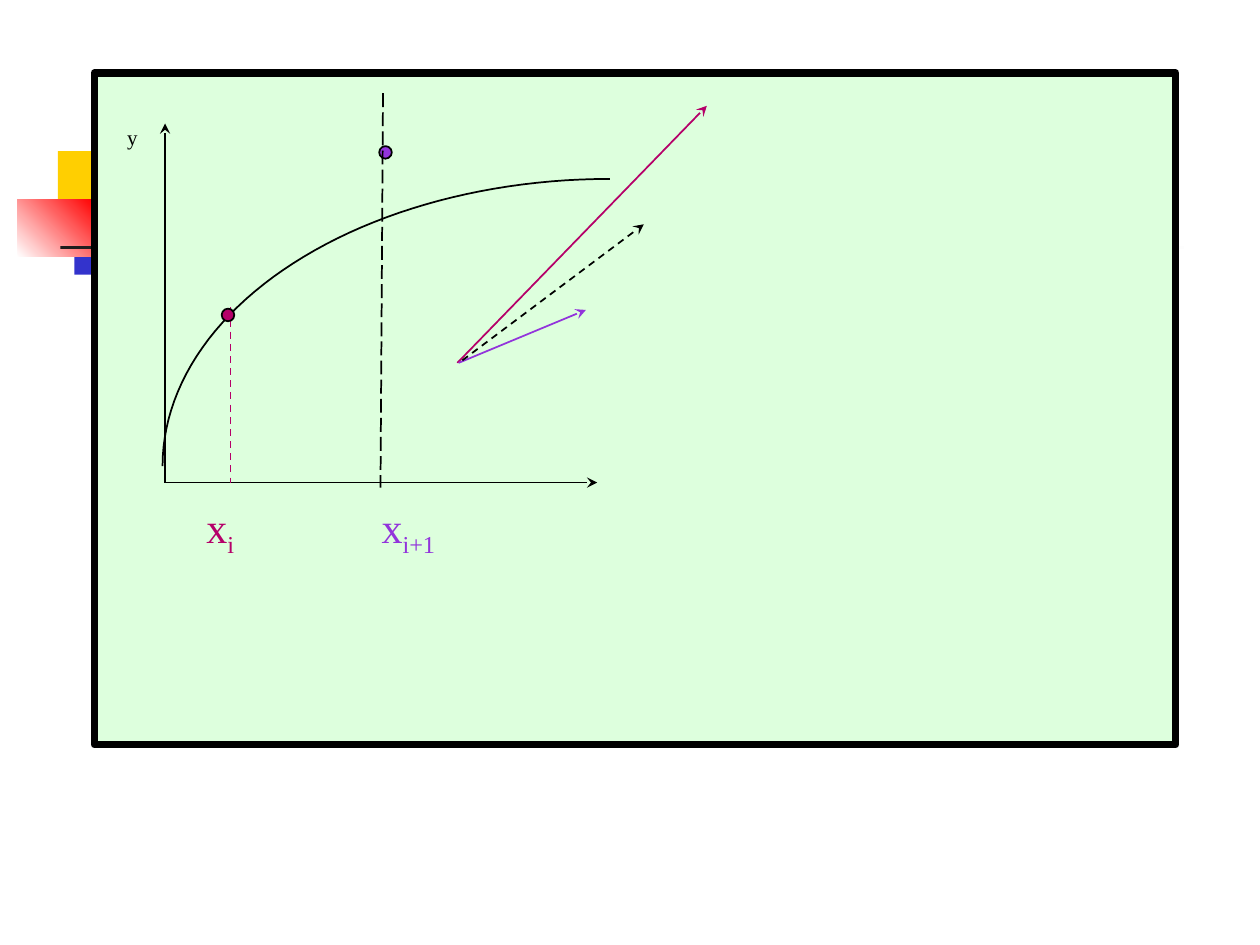
import math

import lxml.etree
import pptx
import pptx.dml.color
import pptx.enum.dml
import pptx.enum.shapes
import pptx.enum.text
import pptx.oxml.ns
import pptx.util

Inches = pptx.util.Inches
Pt = pptx.util.Pt
SHAPE = pptx.enum.shapes.MSO_SHAPE
DASH = pptx.enum.dml.MSO_LINE
qn = pptx.oxml.ns.qn

BLACK, CRIMSON, PURPLE = "000000", "B50069", "9234DB"


def color(value):
    return pptx.dml.color.RGBColor.from_string(value)


def add_figure(kind, box, fill, outline=None, width=1):
    figure = slide.shapes.add_shape(kind, *map(Inches, box))
    figure.shadow.inherit = False
    if isinstance(fill, str):
        figure.fill.solid()
        figure.fill.fore_color.rgb = color(fill)
    else:
        start, end, angle = fill
        figure.fill.gradient()
        figure.fill.gradient_angle = angle
        for stop, value in zip(figure.fill.gradient_stops, (start, end)):
            stop.color.rgb = color(value)
    if outline:
        figure.line.color.rgb = color(outline)
        figure.line.width = Pt(width)
    else:
        figure.line.fill.background()


deck = pptx.Presentation()
deck.slide_width, deck.slide_height = Inches(10), Inches(7.5)
slide = deck.slides.add_slide(deck.slide_layouts[6])

for box, fill in [
    ((0.46, 1.2, 0.48, 0.52), "FFCF01"),
    ((0.59, 1.66, 0.46, 0.52), "3333CC"),
    ((0.14, 1.58, 0.61, 0.46), ("FFFFFF", "FF0000", 45)),
    ((0.48, 1.95, 9, 0.03), ("1C1C1C", "FFFFFF", 0)),
]:
    add_figure(SHAPE.RECTANGLE, box, fill)
add_figure(SHAPE.RECTANGLE, (0.75, 0.58, 8.58, 5.33), "DDFFDD", BLACK, 4.5)

center_x, center_y, radius_x, radius_y = 4.84, 3.7, 3.55, 2.28
steps = 48
arc = [
    (
        Inches(center_x - radius_x * math.cos(step * math.pi / 2 / steps)),
        Inches(center_y - radius_y * math.sin(step * math.pi / 2 / steps)),
    )
    for step in range(steps + 1)
]
builder = slide.shapes.build_freeform(*arc[0], scale=1.0)
builder.add_line_segments(arc[1:], close=False)
solution_curve = builder.convert_to_shape()
solution_curve.shadow.inherit = False
solution_curve.fill.background()
solution_curve.line.color.rgb = color(BLACK)
solution_curve.line.width = Pt(1)

add_figure(SHAPE.OVAL, (3.01, 1.16, 0.1, 0.1), PURPLE, BLACK)

for start, end, stroke, dash, arrow in [
    ((1.31, 3.83), (1.31, 0.98), BLACK, None, True),
    ((1.31, 3.83), (4.74, 3.83), BLACK, None, True),
    ((1.83, 2.44), (1.83, 3.83), CRIMSON, DASH.DASH, False),
    ((3.04, 0.74), (3.02, 3.87), BLACK, DASH.LONG_DASH, False),
    ((3.63, 2.88), (5.61, 0.84), CRIMSON, None, True),
    ((3.64, 2.88), (4.65, 2.46), PURPLE, None, True),
    ((3.67, 2.86), (5.11, 1.78), BLACK, DASH.DASH, True),
]:
    segment = slide.shapes.add_connector(
        pptx.enum.shapes.MSO_CONNECTOR.STRAIGHT, *map(Inches, start + end)
    )
    segment.line.color.rgb = color(stroke)
    segment.line.width = Pt(1)
    if dash:
        segment.line.dash_style = dash
    properties = segment._element.spPr
    if arrow:
        lxml.etree.SubElement(properties.find(qn("a:ln")), qn("a:tailEnd"), type="stealth")
    lxml.etree.SubElement(properties, qn("a:effectLst"))

add_figure(SHAPE.OVAL, (1.76, 2.45, 0.1, 0.1), CRIMSON, BLACK)

for box, size, pieces in [
    ((0.91, 0.94, 0.28, 0.3), 12, [("y", BLACK, False)]),
    (
        (1.54, 3.93, 2.06, 0.5),
        24,
        [
            ("x", CRIMSON, False),
            ("i", CRIMSON, True),
            ("\tx", PURPLE, False),
            ("i+1", PURPLE, True),
        ],
    ),
]:
    label = slide.shapes.add_textbox(*map(Inches, box)).text_frame
    label.word_wrap = False
    label.auto_size = pptx.enum.text.MSO_AUTO_SIZE.SHAPE_TO_FIT_TEXT
    paragraph = label.paragraphs[0]
    paragraph.font.name = "Times New Roman"
    paragraph.font.size = Pt(size)
    if len(pieces) > 1:
        tabs = lxml.etree.Element(qn("a:tabLst"))
        lxml.etree.SubElement(tabs, qn("a:tab"), pos=str(Inches(1.39)), algn="l")
        paragraph._p.get_or_add_pPr().insert(0, tabs)
    for words, ink, subscript in pieces:
        run = paragraph.add_run()
        run.text = words
        run.font.color.rgb = color(ink)
        if subscript:
            run._r.get_or_add_rPr().set("baseline", "-25000")

deck.save("out.pptx")
